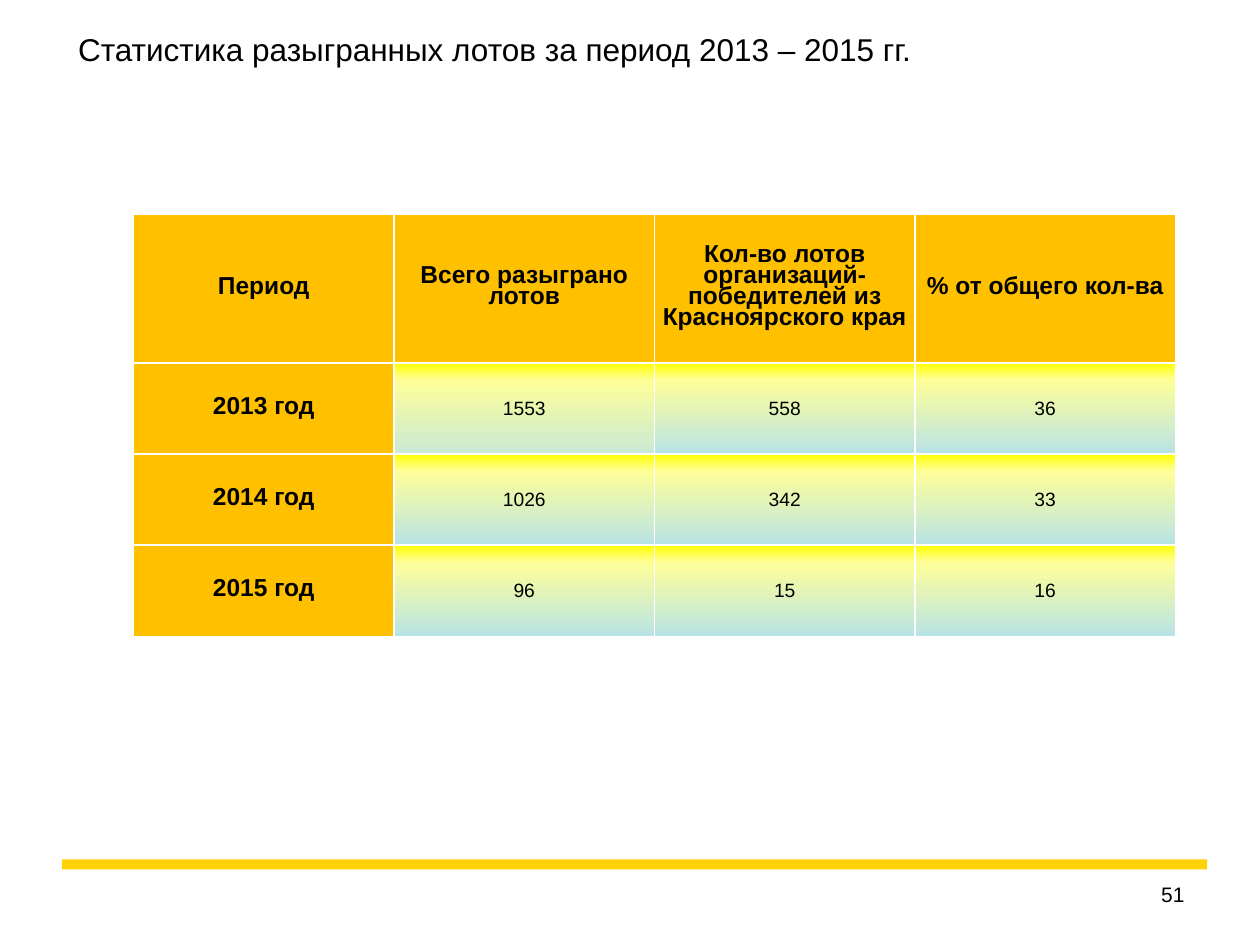
from lxml import etree
from pptx import Presentation
from pptx.dml.color import RGBColor
from pptx.enum.shapes import MSO_SHAPE
from pptx.enum.text import MSO_ANCHOR, MSO_AUTO_SIZE, PP_ALIGN
from pptx.oxml.ns import qn
from pptx.util import Inches, Pt

LEFT, CENTER, RIGHT = PP_ALIGN.LEFT, PP_ALIGN.CENTER, PP_ALIGN.RIGHT
TOP, MIDDLE = MSO_ANCHOR.TOP, MSO_ANCHOR.MIDDLE
RECTANGLE = MSO_SHAPE.RECTANGLE
NO_AUTOFIT = MSO_AUTO_SIZE.NONE

FONT = "Arial"
TITLE_ONLY = 5
COLORS = {
    "text": "000000",
    "border": "FFFFFF",
    "header": "FFC000",
    "rule": "FED208",
    "bright": "FFFF00",
    "pale": "FFFF99",
    "blue": "B8E3E6",
    "green": "C8E9D4",
}
ROWS = [
    ["Период", "Всего разыграно лотов",
     "Кол-во лотов организаций- победителей из Красноярского края",
     "% от общего кол-ва"],
    ["2013 год", "1553", "558", "36"],
    ["2014 год", "1026", "342", "33"],
    ["2015 год", "96", "15", "16"],
]
HEADER_HEIGHT = 1.18


def color(name):
    return RGBColor.from_string(COLORS[name])


def write(frame, text, size, align, bold=False):
    para = frame.paragraphs[0]
    para.alignment = align
    span = para.add_run()
    span.text = text
    span.font.name = FONT
    span.font.size = Pt(size)
    span.font.bold = bold
    span.font.color.rgb = color("text")
    return para


def add_color(parent, name):
    etree.SubElement(parent, qn("a:srgbClr"), val=COLORS[name])


def add_borders(cell):
    properties = cell._tc.get_or_add_tcPr()
    for side in ("a:lnL", "a:lnR", "a:lnT", "a:lnB"):
        line = etree.SubElement(properties, qn(side), w=str(Pt(1)))
        add_color(etree.SubElement(line, qn("a:solidFill")), "border")


def add_gradient(cell, end):
    """Fill a cell from top to bottom with three colour stops."""
    properties = cell._tc.get_or_add_tcPr()
    gradient = etree.SubElement(properties, qn("a:gradFill"), rotWithShape="1")
    stops = etree.SubElement(gradient, qn("a:gsLst"))
    for percent, name in ((0, "bright"), (19, "pale"), (100, end)):
        stop = etree.SubElement(stops, qn("a:gs"), pos=str(percent * 1000))
        add_color(stop, name)
    etree.SubElement(gradient, qn("a:lin"), ang=str(90 * 60000), scaled="0")


def place_title(page, left, top, width, height):
    title = page.shapes.title
    title.left, title.top = Inches(left), Inches(top)
    title.width, title.height = Inches(width), Inches(height)
    frame = title.text_frame
    frame.auto_size = NO_AUTOFIT
    frame.vertical_anchor = TOP
    write(frame, "Статистика разыгранных лотов за период 2013 – 2015 гг.", 18, LEFT)


def fill_cell(cell, text, row, column):
    cell.margin_left = cell.margin_top = cell.margin_right = Inches(0.01)
    cell.margin_bottom = 0
    cell.vertical_anchor = MIDDLE
    is_header = row == 0 or column == 0
    para = write(cell.text_frame, text, 14 if is_header else 11, CENTER, is_header)
    para.line_spacing = Pt(12)
    add_borders(cell)
    if is_header:
        cell.fill.solid()
        cell.fill.fore_color.rgb = color("header")
    else:
        add_gradient(cell, "green" if (row, column) == (1, 1) else "blue")


def place_table(page, left, top, width, height):
    table = page.shapes.add_table(
        len(ROWS), len(ROWS[0]),
        Inches(left), Inches(top), Inches(width), Inches(height)).table
    body_height = (height - HEADER_HEIGHT) / (len(ROWS) - 1)
    for row, texts in enumerate(ROWS):
        table.rows[row].height = Inches(body_height if row else HEADER_HEIGHT)
        for column, text in enumerate(texts):
            fill_cell(table.cell(row, column), text, row, column)


def place_footer(page, left, top, width):
    # Yellow rule
    rule = page.shapes.add_shape(
        RECTANGLE, Inches(left), Inches(top), Inches(width), Inches(0.08))
    rule.shadow.inherit = False
    rule.fill.solid()
    rule.fill.fore_color.rgb = color("rule")
    rule.line.fill.background()

    # Page number
    box = page.shapes.add_textbox(
        Inches(left + 6.68), Inches(top + 0.13), Inches(2.33), Inches(0.4))
    box.text_frame.word_wrap = True
    write(box.text_frame, "51", 12, RIGHT)


def main():
    deck = Presentation()
    deck.slide_width, deck.slide_height = Inches(10), Inches(7.5)
    page = deck.slides.add_slide(deck.slide_layouts[TITLE_ONLY])
    place_footer(page, 0.49, 6.82, 9.09)
    place_title(page, 0.52, 0.19, 8.23, 0.65)
    place_table(page, 1.06, 1.7, 8.27, 3.35)
    deck.save("out.pptx")


if __name__ == "__main__":
    main()
